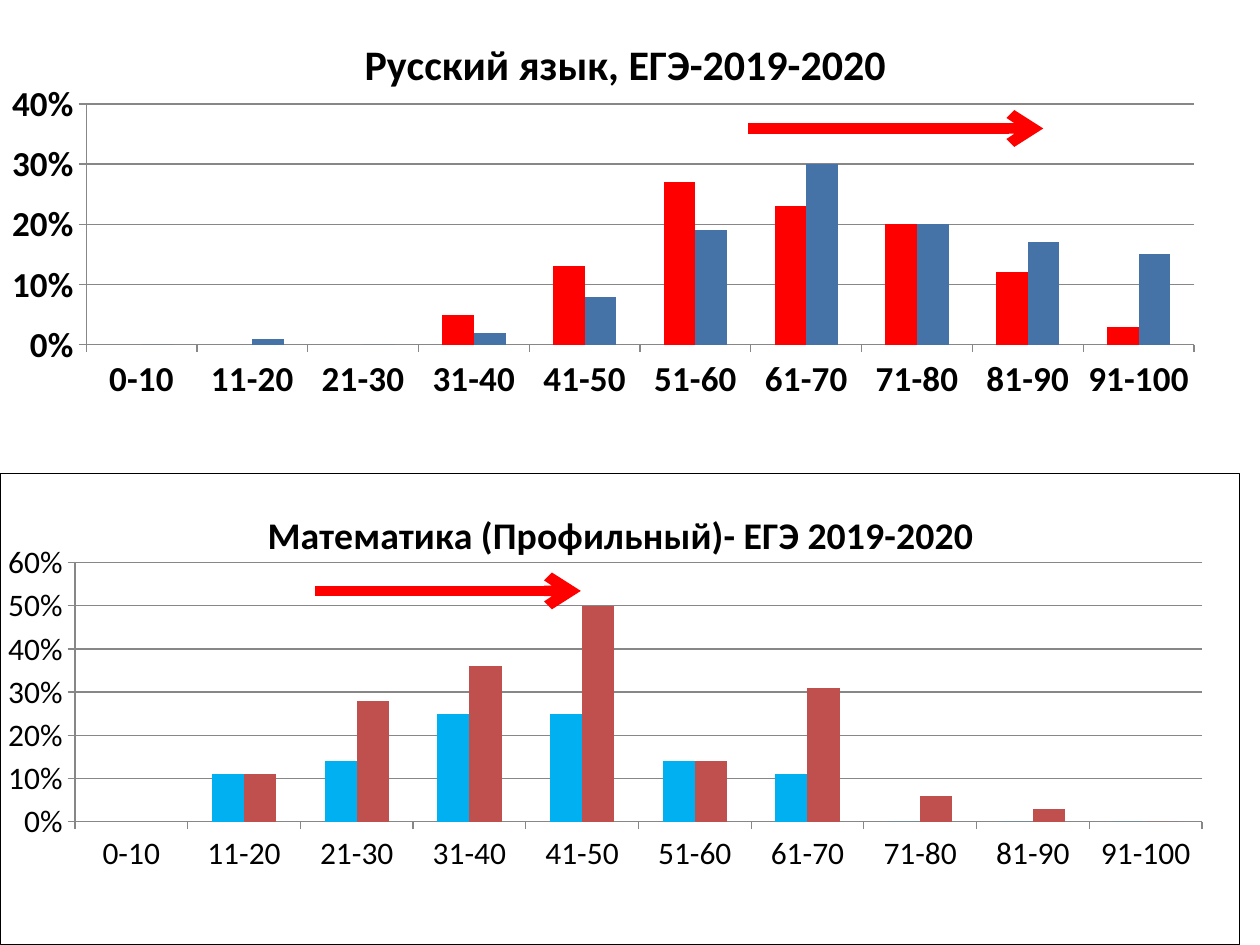
import pptx
import pptx.chart.data
import pptx.dml.color
import pptx.enum.chart
import pptx.enum.shapes
import pptx.oxml
import pptx.oxml.ns
import pptx.util
from pptx.util import Inches

COLORS = {
    "text": "000000",
    "axis": "878787",
    "red": "FF0000",
    "blue": "4572A7",
    "sky": "00B0F0",
    "brick": "C0504D",
}
FONT = "Calibri"
SCORE_BANDS = ["0-10"] + [f"{low}-{low + 9}" for low in range(11, 100, 10)]
qn = pptx.oxml.ns.qn


def rgb(name):
    return pptx.dml.color.RGBColor.from_string(COLORS[name])


def format_font(font, size, bold):
    font.name = FONT
    font.size = pptx.util.Pt(size)
    font.bold = bold
    font.color.rgb = rgb("text")


def write_text(text_frame, text, size, bold=True):
    run = text_frame.paragraphs[0].add_run()
    run.text = text
    format_font(run.font, size, bold)


def place_part(element, index, **fractions):
    """Give a chart part a manual layout, in fractions of the chart."""
    for old in element.findall(qn("c:layout")):
        element.remove(old)
    target = '<c:layoutTarget val="inner"/>' if "w" in fractions else ""
    modes = "".join(f'<c:{key}Mode val="edge"/>' for key in fractions if key in "xy")
    values = "".join(f'<c:{key} val="{value}"/>' for key, value in fractions.items())
    element.insert(index, pptx.oxml.parse_xml(
        f'<c:layout {pptx.oxml.ns.nsdecls("c")}><c:manualLayout>'
        f"{target}{modes}{values}</c:manualLayout></c:layout>"))


def set_frame(chart, border):
    if border:
        line = (f'<a:ln w="9525"><a:solidFill><a:srgbClr val="{COLORS["text"]}"/>'
                "</a:solidFill></a:ln>")
    else:
        line = "<a:ln><a:noFill/></a:ln>"
    properties = pptx.oxml.parse_xml(
        f'<c:spPr {pptx.oxml.ns.nsdecls("c", "a")}><a:noFill/>{line}</c:spPr>')
    chart.element.find(qn("c:chart")).addnext(properties)


def format_axis(axis, size, bold):
    axis.major_tick_mark = pptx.enum.chart.XL_TICK_MARK.OUTSIDE
    axis.minor_tick_mark = pptx.enum.chart.XL_TICK_MARK.NONE
    axis.format.line.color.rgb = rgb("axis")
    axis.format.line.width = pptx.util.Pt(0.75)
    format_font(axis.tick_labels.font, size, bold)


def add_score_chart(slide, title, top, width, series, maximum, size, bold,
                    title_size, title_at, plot, border=False):
    data = pptx.chart.data.CategoryChartData(number_format="0%")
    data.categories = SCORE_BANDS
    for number, (values, _) in enumerate(series, 1):
        data.add_series(f"Series {number}", values)
    chart = slide.shapes.add_chart(
        pptx.enum.chart.XL_CHART_TYPE.COLUMN_CLUSTERED,
        0, Inches(top), Inches(width), Inches(3.75), data).chart
    format_font(chart.font, size, bold)
    set_frame(chart, border)
    chart.has_legend = False
    chart.has_title = True
    write_text(chart.chart_title.text_frame, title, title_size)
    chart.chart_title.include_in_layout = False
    title_x, title_y = title_at
    place_part(chart.element.find(".//" + qn("c:title")), 1, x=title_x, y=title_y)
    x, y, w, h = plot
    place_part(chart.element.find(".//" + qn("c:plotArea")), 0, x=x, y=y, w=w, h=h)

    columns = chart.plots[0]
    columns.vary_by_categories = False
    columns.gap_width = 150
    columns.overlap = 0
    for column, (_, color) in zip(columns.series, series):
        column.format.fill.solid()
        column.format.fill.fore_color.rgb = rgb(color)
        column.invert_if_negative = False

    format_axis(chart.category_axis, size, bold)
    values_axis = chart.value_axis
    format_axis(values_axis, size, bold)
    values_axis.minimum_scale = 0
    values_axis.maximum_scale = maximum
    values_axis.major_unit = 0.1
    values_axis.tick_labels.number_format = "0%"
    values_axis.tick_labels.number_format_is_linked = False
    values_axis.has_major_gridlines = True
    values_axis.major_gridlines.format.line.color.rgb = rgb("axis")


def add_trend_arrow(slide, left, right, y):
    arrow = slide.shapes.add_connector(
        pptx.enum.shapes.MSO_CONNECTOR.STRAIGHT,
        Inches(left), Inches(y), Inches(right), Inches(y))
    arrow.line.color.rgb = rgb("red")
    arrow.line.width = pptx.util.Pt(6)
    namespace = pptx.oxml.ns.nsdecls("a")
    arrow.line._get_or_add_ln().append(
        pptx.oxml.parse_xml(f'<a:tailEnd {namespace} type="arrow"/>'))
    arrow.element.spPr.append(pptx.oxml.parse_xml(f"<a:effectLst {namespace}/>"))


def main():
    presentation = pptx.Presentation()
    presentation.slide_width = Inches(10)
    presentation.slide_height = Inches(7.5)
    slide = presentation.slides.add_slide(presentation.slide_layouts[6])

    add_score_chart(
        slide, "Математика (Профильный)- ЕГЭ 2019-2020", top=3.75, width=9.84,
        series=[
            ([None, 0.11, 0.14, 0.25, 0.25, 0.14, 0.11, 0, 0, 0], "sky"),
            ([None, 0.11, 0.28, 0.36, 0.5, 0.14, 0.31, 0.06, 0.03, 0], "brick"),
        ],
        maximum=0.6, size=18, bold=False, title_size=21.6, title_at=(0.21, 0.06),
        plot=(0.06, 0.19, 0.91, 0.55), border=True)
    add_trend_arrow(slide, 2.5, 4.61, 4.69)

    add_score_chart(
        slide, "Русский язык, ЕГЭ-2019-2020", top=0, width=9.77,
        series=[
            ([None, None, None, 0.05, 0.13, 0.27, 0.23, 0.2, 0.12, 0.03], "red"),
            ([0, 0.01, 0, 0.02, 0.08, 0.19, 0.3, 0.2, 0.17, 0.15], "blue"),
        ],
        maximum=0.4, size=20, bold=True, title_size=24, title_at=(0.29, 0.06),
        plot=(0.07, 0.22, 0.9, 0.51))
    add_trend_arrow(slide, 5.94, 8.28, 1.02)

    presentation.save("out.pptx")


if __name__ == "__main__":
    main()
